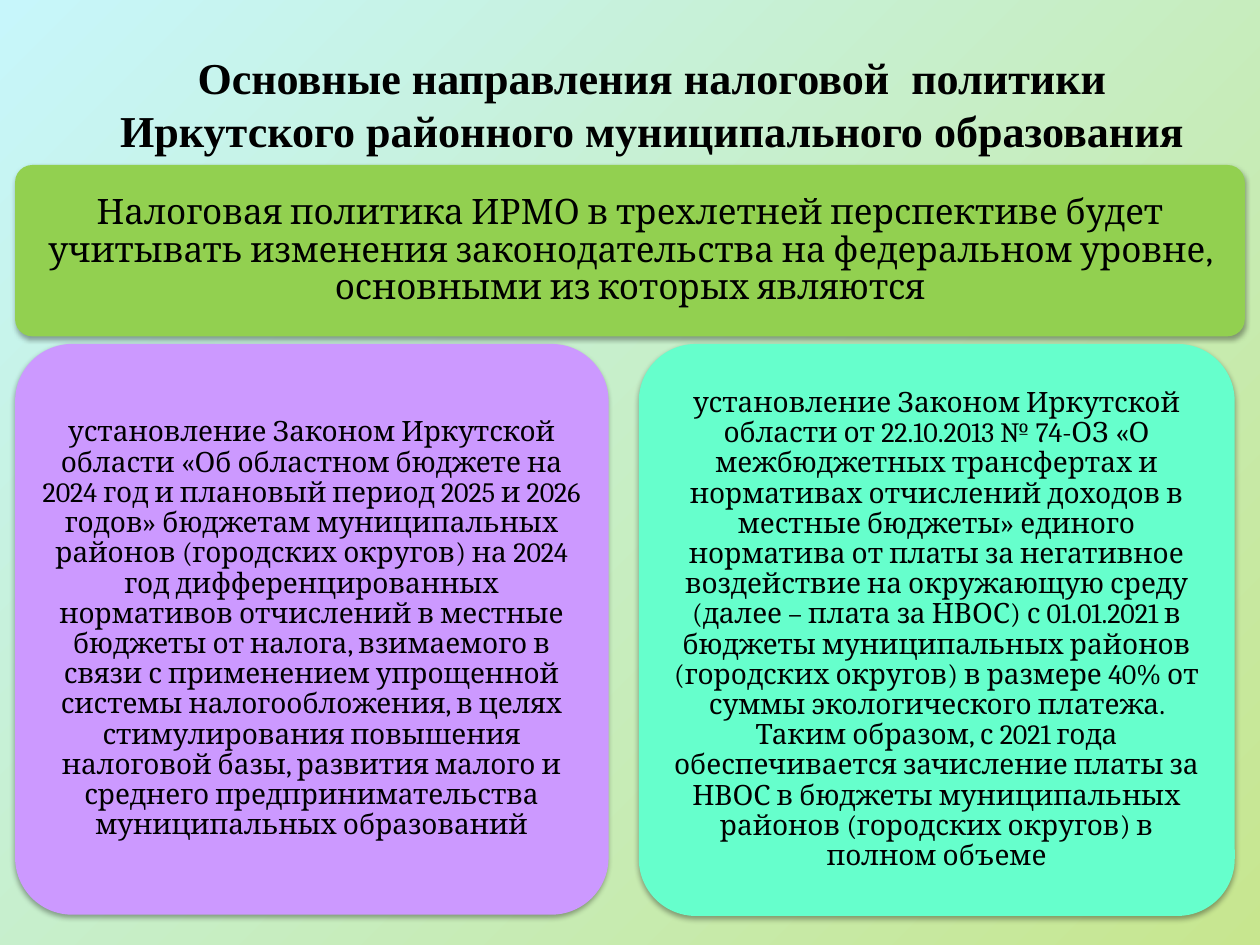
from dataclasses import dataclass

from lxml import etree
from pptx import Presentation
from pptx import util as u
from pptx.dml.color import RGBColor
from pptx.enum import shapes, text
from pptx.oxml.ns import qn

COLORS = {
    "ink": "000000",
    "sky": "C7F6FB",
    "lime": "C7E68F",
    "green": "92D050",
    "violet": "CC99FF",
    "mint": "66FFCC",
}


@dataclass
class Panel:
    left: float
    top: float
    width: float
    height: float
    color: str
    size: float
    inset: float
    wording: str


PANELS = [
    Panel(0.12, 1.31, 9.76, 1.36, "green", 20, 0.08,
          "Налоговая политика ИРМО в трехлетней перспективе будет учитывать "
          "изменения законодательства на федеральном уровне, основными из "
          "которых являются"),
    Panel(0.12, 2.73, 4.71, 4.53, "violet", 16, 0.07,
          "установление Законом Иркутской области «Об областном бюджете на "
          "2024 год и плановый период 2025 и 2026 годов» бюджетам "
          "муниципальных районов (городских округов) на 2024 год "
          "дифференцированных нормативов отчислений в местные бюджеты от "
          "налога, взимаемого в связи с применением упрощенной системы "
          "налогообложения, в целях стимулирования повышения налоговой базы, "
          "развития малого и среднего предпринимательства муниципальных "
          "образований"),
    Panel(5.07, 2.73, 4.73, 4.54, "mint", 16, 0.07,
          "установление Законом Иркутской области от 22.10.2013 № 74-ОЗ «О "
          "межбюджетных трансфертах и нормативах отчислений доходов в "
          "местные бюджеты» единого норматива от платы за негативное "
          "воздействие на окружающую среду (далее – плата за НВОС) с "
          "01.01.2021 в бюджеты муниципальных районов (городских округов) в "
          "размере 40% от суммы экологического платежа. Таким образом, с "
          "2021 года обеспечивается зачисление платы за НВОС в бюджеты "
          "муниципальных районов (городских округов) в полном объеме"),
]


def rgb(name: str) -> RGBColor:
    return RGBColor.from_string(COLORS[name])


def paint_background(page) -> None:
    fill = page.background.fill
    fill.gradient()
    fill.gradient_angle = 315
    for stop, name in zip(fill.gradient_stops, ("sky", "lime")):
        stop.color.rgb = rgb(name)


def write(box, wording: str, font: str, size: float, bold: bool = False):
    """Fill the box with one centred paragraph and return that paragraph."""
    box.text_frame.word_wrap = True
    para = box.text_frame.paragraphs[0]
    para.alignment = text.PP_ALIGN.CENTER
    span = para.add_run()
    span.text = wording
    span.font.name = font
    span.font.size = u.Pt(size)
    span.font.bold = bold
    span.font.color.rgb = rgb("ink")
    return para


def add_soft_shadow(shape) -> None:
    """Replace the theme shadow with a faint one falling straight down."""
    shape.shadow.inherit = False
    effects = shape._element.spPr.find(qn("a:effectLst"))
    shadow = etree.SubElement(
        effects, qn("a:outerShdw"), blurRad=str(u.Pt(3.1)),
        dist=str(u.Pt(1.8)), dir="5400000", rotWithShape="0")
    color = etree.SubElement(shadow, qn("a:srgbClr"), val=COLORS["ink"])
    etree.SubElement(color, qn("a:alpha"), val="35000")


def add_title(page) -> None:
    box = page.shapes.add_textbox(
        u.Inches(0.75), u.Inches(0.21), u.Inches(8.85), u.Inches(1.08))
    box.text_frame.vertical_anchor = text.MSO_ANCHOR.BOTTOM
    write(box, "Основные направления налоговой  политики Иркутского "
          "районного муниципального образования",
          "Times New Roman", 25.2, bold=True)


def add_panel(page, panel: Panel) -> None:
    shape = page.shapes.add_shape(
        shapes.MSO_SHAPE.ROUNDED_RECTANGLE,
        u.Inches(panel.left), u.Inches(panel.top),
        u.Inches(panel.width), u.Inches(panel.height))
    shape.adjustments[0] = 0.1
    shape.fill.solid()
    shape.fill.fore_color.rgb = rgb(panel.color)
    shape.line.fill.background()
    add_soft_shadow(shape)
    frame = shape.text_frame
    frame.vertical_anchor = text.MSO_ANCHOR.MIDDLE
    frame.margin_left = frame.margin_right = u.Inches(panel.inset)
    frame.margin_top = frame.margin_bottom = u.Inches(panel.inset)
    para = write(shape, panel.wording, "Cambria", panel.size)
    para.line_spacing = 0.9


def main() -> None:
    deck = Presentation()
    deck.slide_width = u.Inches(10)
    deck.slide_height = u.Inches(7.5)
    page = deck.slides.add_slide(deck.slide_layouts[6])
    paint_background(page)
    add_title(page)
    for panel in PANELS:
        add_panel(page, panel)
    deck.save("out.pptx")


if __name__ == "__main__":
    main()
